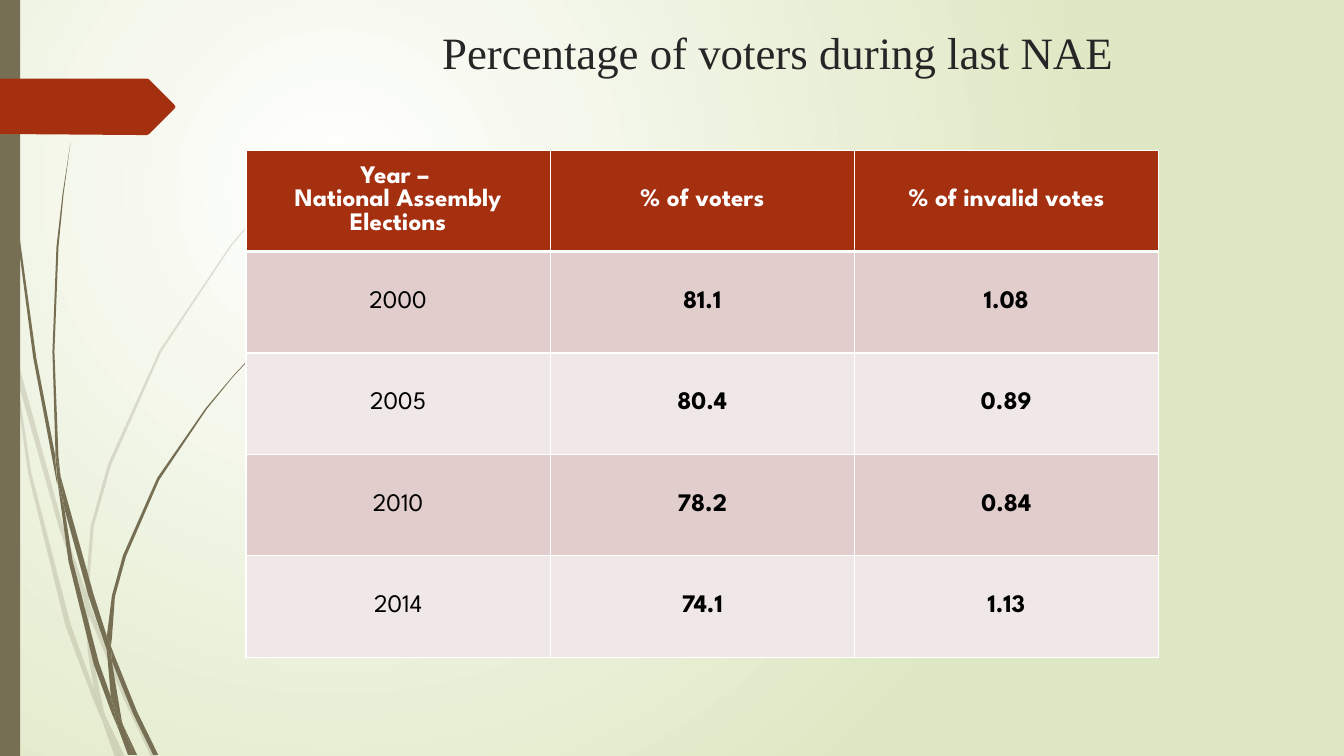
from lxml import etree
from pptx import Presentation, util as u
from pptx.dml.color import RGBColor
from pptx.enum import shapes, text
from pptx.oxml.ns import qn

OLIVE = RGBColor(0x76, 0x6F, 0x54)
RUST = RGBColor(0xA5, 0x30, 0x10)
PALE_GREEN = RGBColor(0xDF, 0xE8, 0xC4)
ROSE = RGBColor(0xE1, 0xCD, 0xCC)
LIGHT_ROSE = RGBColor(0xF0, 0xE8, 0xE7)
CHARCOAL = RGBColor(0x26, 0x26, 0x26)
WHITE = RGBColor(0xFF, 0xFF, 0xFF)
BLACK = RGBColor(0, 0, 0)

# Outlines of the grass blades, as corner points in inches
FADED_GRASS = [
    [(.11, 3.5), (.09, 3.22), (0, 2.82), (0, 2.99), (.1, 3.44)],
    [(.58, 5.22), (.84, 5.99), (.85, 5.86), (.62, 5.2), (.14, 3.45), (.17, 3.76)],
    [(.92, 6.07), (.88, 5.96), (.88, 6.1), (1.23, 6.94), (1.5, 7.51), (1.55, 7.51),
     (1.27, 6.92)],
    [(1.19, 7.51), (1.24, 7.51), (1.05, 7.11)],
    [(.93, 6.83), (.7, 6.19), (.31, 4.69), (.17, 3.76), (.11, 3.5), (.28, 4.7),
     (.65, 6.21), (.92, 6.93), (1.01, 7.14), (.99, 7.07)],
    [(.84, 5.99), (.87, 6.46), (.93, 6.83), (.96, 6.92), (1.05, 7.11), (1.03, 7.06),
     (.91, 6.46), (.88, 6.1), (.88, 6.08)],
    [(.88, 5.84), (.93, 5.22), (1.1, 4.62), (1.6, 3.49), (2.29, 2.45), (2.68, 1.98),
     (2.9, 1.75), (3.12, 1.54), (3.12, 1.53), (2.89, 1.75), (2.68, 1.97), (2.28, 2.44),
     (1.58, 3.48), (1.07, 4.61), (.9, 5.22), (.85, 5.84), (.85, 5.86), (.88, 5.96)],
    [(1.01, 7.14), (1.14, 7.51), (1.19, 7.51)],
    [(.88, 6.08), (.88, 6.1), (.88, 5.96), (.85, 5.86), (.84, 5.99)],
    [(.96, 6.92), (.93, 6.83), (.99, 7.07), (1.01, 7.14), (1.19, 7.51), (1.05, 7.11)],
]
DARK_GRASS = [
    [(.07, 1.1), (.17, 2.33), (.33, 3.55), (.56, 4.77), (.57, 4.81), (.55, 4.57),
     (.55, 4.53), (.36, 3.55), (.19, 2.32), (.08, 1.09), (.05, .48), (.04, 0), (.03, 0),
     (.04, .48)],
    [(.88, 5.92), (1.06, 6.45), (1.06, 6.33), (1.06, 6.31), (.93, 5.9), (.6, 4.72),
     (.64, 5.05)],
    [(1.13, 6.49), (1.1, 6.41), (1.11, 6.56), (1.32, 7.08), (1.52, 7.49), (1.57, 7.49),
     (1.36, 7.06)],
    [(1.1, 6.91), (.98, 6.57), (.72, 5.56), (.64, 5.05), (.57, 4.77), (.68, 5.57),
     (.93, 6.59), (1.11, 7.08), (1.17, 7.22), (1.16, 7.17)],
    [(.6, 4.72), (.58, 4.53), (.54, 3.49), (.58, 2.45), (.63, 1.93), (.7, 1.41),
     (.62, 1.93), (.56, 2.45), (.52, 3.49), (.55, 4.49)],
    [(1.33, 7.49), (1.36, 7.49), (1.22, 7.19)],
    [(.57, 4.77), (.64, 5.05), (.6, 4.72), (.55, 4.49), (.55, 4.53)],
    [(1.11, 6.33), (1.14, 5.92), (1.25, 5.52), (1.58, 4.76), (2.05, 4.06), (2.31, 3.74),
     (2.45, 3.59), (2.61, 3.44), (2.6, 3.44), (2.45, 3.58), (2.31, 3.73), (2.04, 4.05),
     (1.56, 4.74), (1.22, 5.51), (1.11, 5.91), (1.06, 6.31), (1.1, 6.41)],
    [(1.17, 7.22), (1.27, 7.49), (1.31, 7.49)],
    [(1.06, 6.45), (1.1, 6.91), (1.16, 7.06), (1.22, 7.19), (1.21, 7.16), (1.11, 6.56),
     (1.09, 6.51)],
    [(1.06, 6.45), (1.09, 6.51), (1.11, 6.56), (1.1, 6.41), (1.06, 6.31), (1.06, 6.33)],
    [(1.16, 7.06), (1.1, 6.91), (1.16, 7.17), (1.17, 7.22), (1.3, 7.49), (1.33, 7.49),
     (1.22, 7.19)],
]
ARROW_TAG = [(0, .78), (1.46, .78), (1.48, .79), (1.73, 1.04), (1.74, 1.06),
             (1.73, 1.08), (1.48, 1.33), (1.46, 1.34), (1.36, 1.34), (0, 1.33)]

TURNOUT = [
    ("Year – \nNational Assembly Elections", "% of voters", "% of invalid votes"),
    ("2000", "81.1", "1.08"),
    ("2005", "80.4", "0.89"),
    ("2010", "78.2", "0.84"),
    ("2014", "74.1", "1.13"),
]


class SlideBuilder:
    heading_font = "Times New Roman"
    table_font = "League Spartan"

    def __init__(self, slide):
        self.slide = slide

    def radial_background(self, inner, outer):
        fill = self.slide.background.fill
        fill.gradient()
        for stop, color in zip(fill.gradient_stops, (inner, outer)):
            stop.color.rgb = color
        gradient = self.slide.element.find(".//" + qn("a:gradFill"))
        for linear in gradient.findall(qn("a:lin")):
            gradient.remove(linear)
        circle = etree.SubElement(gradient, qn("a:path"), {"path": "circle"})
        etree.SubElement(circle, qn("a:fillToRect"),
                         {"l": "50000", "t": "50000", "r": "100000", "b": "100000"})

    def paint(self, shape, color, opacity=100):
        shape.shadow.inherit = False
        shape.fill.solid()
        shape.fill.fore_color.rgb = color
        shape.line.fill.background()
        if opacity < 100:
            rgb = shape.element.spPr.find(".//" + qn("a:srgbClr"))
            etree.SubElement(rgb, qn("a:alpha"), val=str(opacity * 1000))

    def outline(self, corners, color, opacity=100, parent=None):
        points = [(u.Inches(x), u.Inches(y)) for x, y in corners]
        builder = (parent or self.slide).shapes.build_freeform(*points[0])
        builder.add_line_segments(points[1:], close=True)
        self.paint(builder.convert_to_shape(), color, opacity)

    def grass(self, blades, opacity=100):
        tuft = self.slide.shapes.add_group_shape()
        for blade in blades:
            self.outline(blade, OLIVE, opacity, tuft)

    def bar(self, left, top, width, height, color):
        bar = self.slide.shapes.add_shape(
            shapes.MSO_SHAPE.RECTANGLE, *map(u.Inches, (left, top, width, height)))
        self.paint(bar, color)

    def format_text(self, frame, font, size, color, bold=False):
        for paragraph in frame.paragraphs:
            paragraph.alignment = text.PP_ALIGN.CENTER
            for run in paragraph.runs:
                run.font.name = font
                run.font.size = u.Pt(size)
                run.font.bold = bold
                run.font.color.rgb = color

    def title(self, wording, left, top, width, height):
        frame = self.slide.shapes.add_textbox(
            *map(u.Inches, (left, top, width, height))).text_frame
        frame.word_wrap = True
        frame.text = wording
        self.format_text(frame, self.heading_font, 32, CHARCOAL)

    def cell_borders(self, cell, bottom):
        properties = cell._tc.get_or_add_tcPr()
        for index, (side, width) in enumerate(
                (("L", 1), ("R", 1), ("T", 1), ("B", bottom))):
            line = etree.Element(qn("a:ln" + side), w=str(u.Pt(width)))
            fill = etree.SubElement(line, qn("a:solidFill"))
            etree.SubElement(fill, qn("a:srgbClr"), val=str(WHITE))
            properties.insert(index, line)

    def table(self, rows, left, top, width, height):
        table = self.slide.shapes.add_table(
            len(rows), len(rows[0]),
            *map(u.Inches, (left, top, width, height))).table
        for r, row in enumerate(rows):
            header = r == 0
            for c, wording in enumerate(row):
                cell = table.cell(r, c)
                cell.text_frame.text = wording
                cell.vertical_anchor = text.MSO_ANCHOR.MIDDLE
                cell.fill.solid()
                cell.fill.fore_color.rgb = RUST if header else ROSE if r % 2 else LIGHT_ROSE
                self.format_text(cell.text_frame, self.table_font, 18,
                                 WHITE if header else BLACK, bold=header or c > 0)
                self.cell_borders(cell, bottom=3 if header else 1)


def main():
    deck = Presentation()
    deck.slide_width, deck.slide_height = u.Inches(13.33), u.Inches(7.5)
    page = SlideBuilder(deck.slides.add_slide(deck.slide_layouts[6]))
    page.radial_background(WHITE, PALE_GREEN)
    page.grass(FADED_GRASS, opacity=20)
    page.grass(DARK_GRASS)
    page.bar(0, 0, 0.2, 7.5, OLIVE)
    page.outline(ARROW_TAG, RUST)
    page.title("Percentage of voters during last NAE", 2.84, 0.2, 9.75, 0.94)
    page.table(TURNOUT, 2.44, 1.49, 9.05, 5.03)
    deck.save("out.pptx")


if __name__ == "__main__":
    main()
